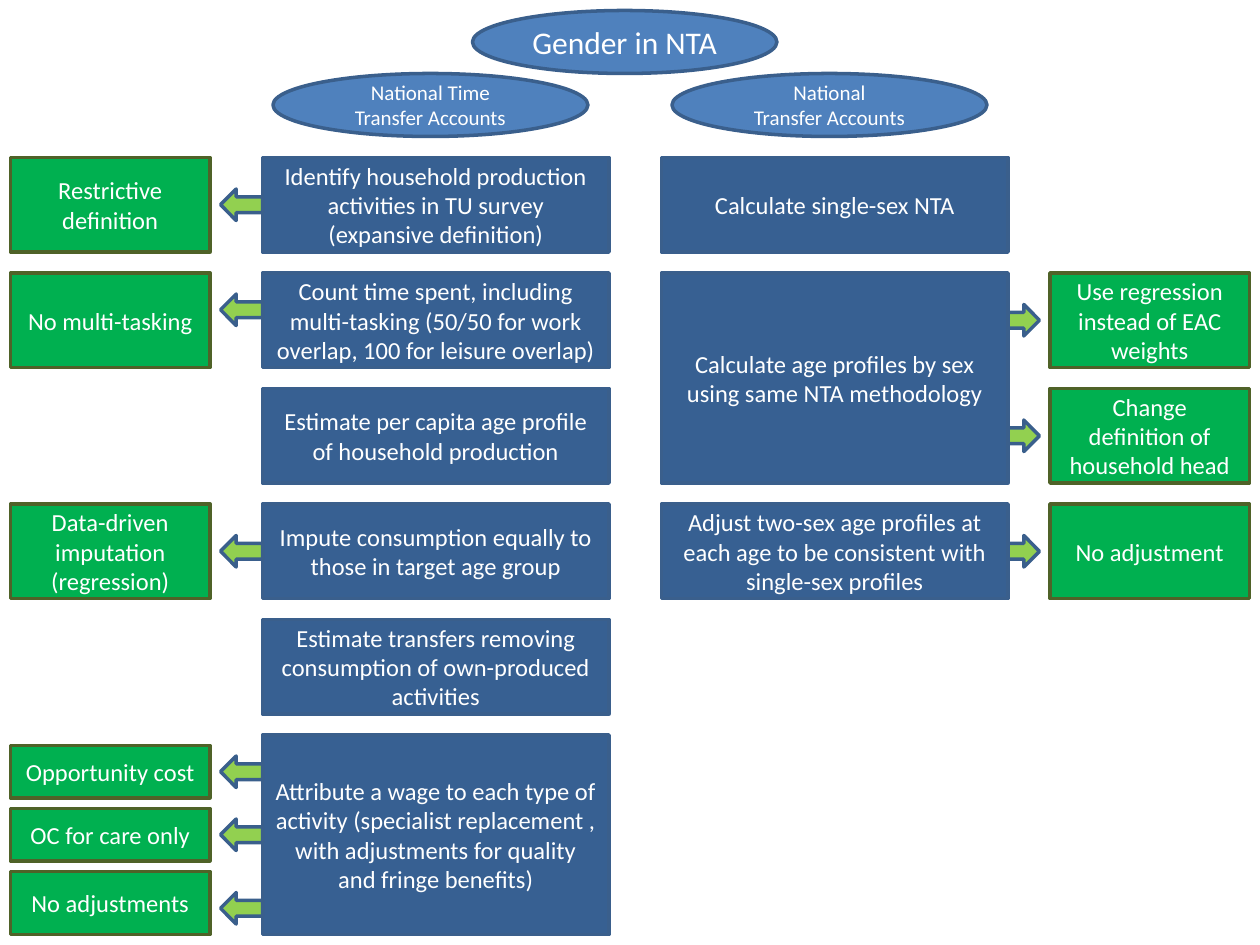
import pptx
import pptx.util
import pptx.dml.color
import pptx.enum.shapes
import pptx.enum.text

Pt = pptx.util.Pt
KIND = pptx.enum.shapes.MSO_SHAPE
ROW, TALL = 66, 54            # row pitch and row height
WIDE, SIDE = 198, 114         # widths of step and option boxes
EDGE = "3A5F8C"


def color(code):
    return pptx.dml.color.RGBColor.from_string(code)


def shape(slide, kind, box, fill, edge=EDGE):
    item = slide.shapes.add_shape(kind, *[Pt(v) for v in box])
    item.shadow.inherit = False
    item.fill.solid()
    item.fill.fore_color.rgb = color(fill)
    item.line.color.rgb = color(edge)
    item.line.width = Pt(2)
    return item


def label(item, lines, size=14):
    frame = item.text_frame
    frame.word_wrap = True
    frame.vertical_anchor = pptx.enum.text.MSO_ANCHOR.MIDDLE
    for i, line in enumerate(lines):
        para = frame.paragraphs[0] if i == 0 else frame.add_paragraph()
        para.alignment = pptx.enum.text.PP_ALIGN.CENTER
        run = para.add_run()
        run.text = line
        run.font.name = "Calibri"
        run.font.size = Pt(size)
        run.font.color.rgb = color("FFFFFF")


def step(slide, x, y, high, text):
    label(shape(slide, KIND.RECTANGLE, (x, y, WIDE, high), "376092"), [text])


def option(slide, x, y, high, text):
    box = (x, y, SIDE, high)
    label(shape(slide, KIND.RECTANGLE, box, "00B050", "4F6228"), [text])


def arrow(slide, x, y, wide, turn=0):
    item = shape(slide, KIND.LEFT_ARROW, (x, y, wide, 18), "92D050")
    item.rotation = turn


def header(slide, x, y):
    # Title above the two account names
    ovals = [
        (114, 0, 174, 18, ["Gender in NTA"]),
        (0, 36, 180, 12, ["National Time", "Transfer Accounts"]),
        (228, 36, 180, 12, ["National", "Transfer Accounts"]),
    ]
    for dx, dy, wide, size, lines in ovals:
        item = shape(slide, KIND.OVAL, (x + dx, y + dy, wide, 36), "4F81BD")
        label(item, lines, size)


def time(slide, x, y):
    # Steps of the time transfer accounts
    steps = [
        "Identify household production activities in TU survey "
        "(expansive definition)",
        "Count time spent, including multi-tasking (50/50 for work overlap, "
        "100 for leisure overlap)",
        "Estimate per capita age profile of household production",
        "Impute consumption equally to those in target age group",
        "Estimate transfers removing consumption of own-produced activities",
        "Attribute a wage to each type of activity (specialist replacement , "
        "with adjustments for quality and fringe benefits)",
    ]
    for i, text in enumerate(steps):
        high = 114 if i == len(steps) - 1 else TALL
        step(slide, x + 144, y + i * ROW, high, text)

    # Options on the left: top, height, arrow drop, text
    options = [
        (0, TALL, 18, "Restrictive definition"),
        (ROW, TALL, 12, "No multi-tasking"),
        (3 * ROW, TALL, 18, "Data-driven imputation (regression)"),
        (336, 30, 6, "Opportunity cost"),
        (372, 30, 6, "OC for care only"),
        (408, 36, 12, "No adjustments"),
    ]
    for top, high, drop, text in options:
        option(slide, x, y + top, high, text)
        arrow(slide, x + 120, y + top + drop, 24)


def transfer(slide, x, y):
    # Steps of the transfer accounts: row, rows covered, text
    steps = [
        (0, 1, "Calculate single-sex NTA"),
        (1, 2, "Calculate age profiles by sex using same NTA methodology"),
        (3, 1, "Adjust two-sex age profiles at each age to be consistent "
               "with single-sex profiles"),
    ]
    for row, span, text in steps:
        step(slide, x, y + row * ROW, (span - 1) * ROW + TALL, text)

    # Options on the right
    options = [
        "Use regression instead of EAC weights",
        "Change definition of household head",
        "No adjustment",
    ]
    for row, text in enumerate(options, 1):
        top = y + row * ROW
        option(slide, x + 222, top, TALL, text)
        arrow(slide, x + WIDE, top + 18, 18, 180)


def main():
    deck = pptx.Presentation()
    deck.slide_width, deck.slide_height = Pt(720), Pt(540)
    slide = deck.slides.add_slide(deck.slide_layouts[6])
    header(slide, 156, 6)
    time(slide, 6, 90)
    transfer(slide, 378, 90)
    deck.save("out.pptx")


if __name__ == "__main__":
    main()
